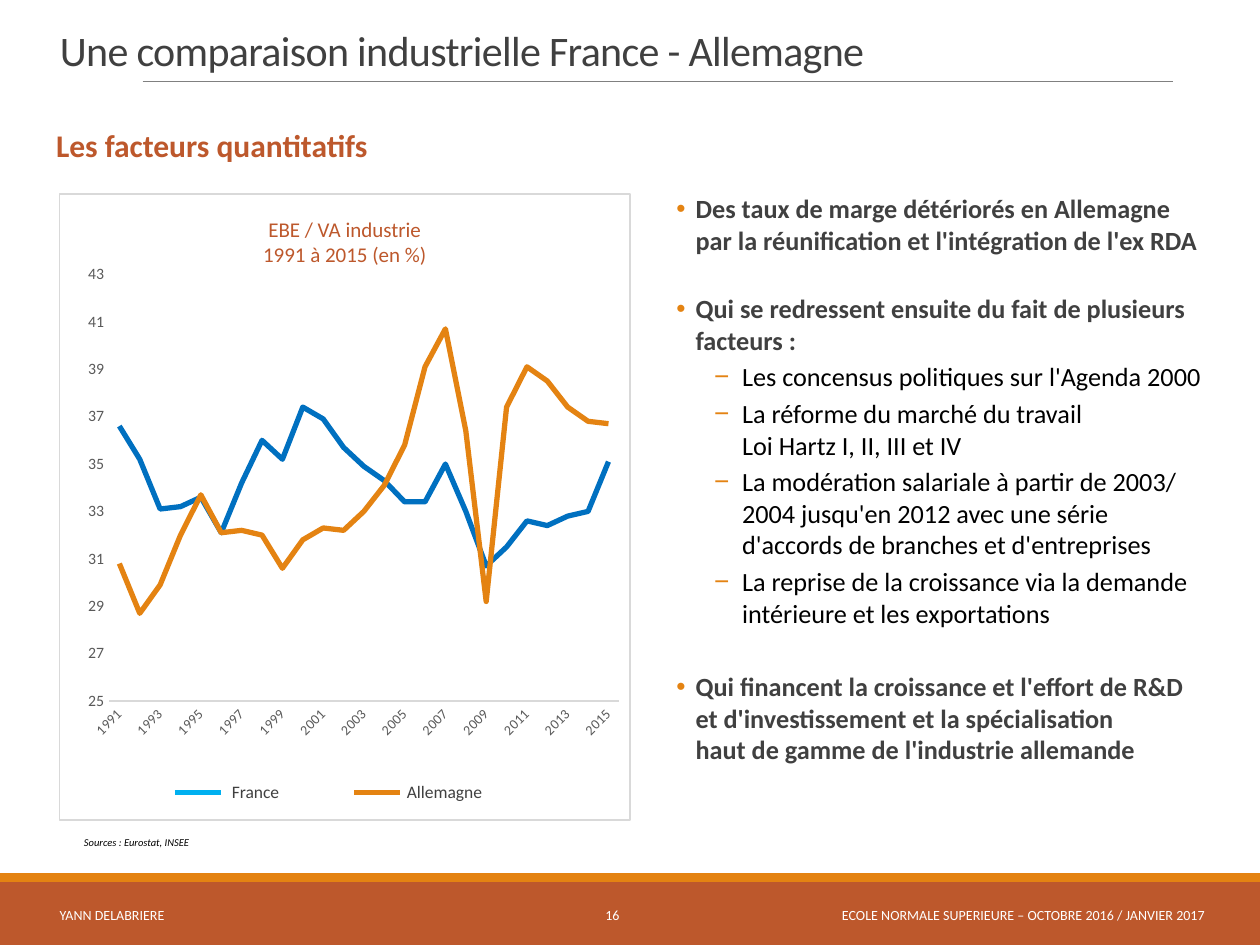
from lxml import etree
from pptx import Presentation
from pptx.chart.data import CategoryChartData
from pptx.dml.color import RGBColor
from pptx.enum.chart import XL_CHART_TYPE, XL_TICK_MARK
from pptx.enum.shapes import MSO_CONNECTOR, MSO_SHAPE
from pptx.enum.text import MSO_ANCHOR, MSO_AUTO_SIZE, PP_ALIGN
from pptx.oxml import parse_xml
from pptx.oxml.ns import nsdecls, qn
from pptx.util import Pt

FONT = "Calibri"
RUST = RGBColor(0xBD, 0x58, 0x2C)
ORANGE = RGBColor(0xE4, 0x83, 0x12)
BLUE = RGBColor(0x00, 0x70, 0xC0)
LIGHT_BLUE = RGBColor(0x00, 0xB0, 0xF0)
DARK = RGBColor(0x40, 0x40, 0x40)
AXIS_TEXT = RGBColor(0x59, 0x59, 0x59)
GREY = RGBColor(0x80, 0x80, 0x80)
PALE = RGBColor(0xD9, 0xD9, 0xD9)
BLACK = RGBColor(0, 0, 0)
WHITE = RGBColor(0xFF, 0xFF, 0xFF)

TITLE = "Une comparaison industrielle France - Allemagne"
SUBTITLE = "Les facteurs quantitatifs"
CHART_TITLE = ["EBE / VA industrie", "1991 à 2015 (en %)"]
SOURCES = "Sources : Eurostat, INSEE"
# left, width, alignment, text
FOOTER = [
    (27, 199, PP_ALIGN.LEFT, "YANN DELABRIERE"),
    (311, 78, PP_ALIGN.CENTER, "16"),
    (459, 237, PP_ALIGN.RIGHT, "ECOLE NORMALE SUPERIEURE – OCTOBRE 2016 / JANVIER 2017"),
]
# level, space before, lines
POINTS = [
    (1, 0, ["Des taux de marge détériorés en Allemagne",
            "par la réunification et l'intégration de l'ex RDA"]),
    (1, 21, ["Qui se redressent ensuite du fait de plusieurs", "facteurs :"]),
    (2, 3, ["Les concensus politiques sur l'Agenda 2000"]),
    (2, 3, ["La réforme du marché du travail", "Loi Hartz I, II, III et IV"]),
    (2, 3, ["La modération salariale à partir de 2003/",
            "2004 jusqu'en 2012 avec une série",
            "d'accords de branches et d'entreprises"]),
    (2, 3, ["La reprise de la croissance via la demande",
            "intérieure et les exportations"]),
    (1, 24, ["Qui financent la croissance et l'effort de R&D",
             "et d'investissement et la spécialisation",
             "haut de gamme de l'industrie allemande"]),
]
# level: bullet, text indent, hanging indent, colour, bold
LEVELS = {1: ("•", 23, 11, DARK, True), 2: ("−", 49.5, 16, BLACK, False)}

YEARS = [str(year) for year in range(1991, 2016)]
SERIES = [
    ("France", BLUE,
     [36.6, 35.2, 33.1, 33.2, 33.6, 32.1, 34.2, 36, 35.2, 37.4, 36.9, 35.7, 34.9,
      34.3, 33.4, 33.4, 35, 33, 30.7, 31.5, 32.6, 32.4, 32.8, 33, 35.1]),
    ("Allemagne", ORANGE,
     [30.8, 28.7, 29.9, 32, 33.7, 32.1, 32.2, 32, 30.6, 31.8, 32.3, 32.2, 33,
      34.1, 35.8, 39.1, 40.7, 36.4, 29.2, 37.4, 39.1, 38.5, 37.4, 36.8, 36.7]),
]
# key line left, label left, colour, label
LEGEND = [(100, 132.5, LIGHT_BLUE, "France"), (202.5, 232.5, ORANGE, "Allemagne")]
PLOT = {"x": 0.07, "y": 0.04, "w": 0.91, "h": 0.865}


def style(font, size, color, bold=False, italic=False):
    font.name, font.size = FONT, Pt(size)
    font.bold, font.italic = bold, italic
    font.color.rgb = color


def place(sp, left, top, width, height):
    sp.left, sp.top, sp.width, sp.height = Pt(left), Pt(top), Pt(width), Pt(height)


def set_frame(sp, anchor, margins, wrap=True):
    """Set anchor and (horizontal, vertical) margins; return the text frame."""
    tf = sp.text_frame
    tf.word_wrap, tf.auto_size, tf.vertical_anchor = wrap, MSO_AUTO_SIZE.NONE, anchor
    tf.margin_left = tf.margin_right = Pt(margins[0])
    tf.margin_top = tf.margin_bottom = Pt(margins[1])
    return tf


def add_run(p, text, *font_style):
    r = p.add_run()
    r.text = text
    style(r.font, *font_style)
    return r


def add_text(s, box, lines, font_style, align=PP_ALIGN.LEFT,
             anchor=MSO_ANCHOR.TOP, margins=(7.2, 3.6), wrap=True):
    sp = s.shapes.add_textbox(*map(Pt, box))
    tf = set_frame(sp, anchor, margins, wrap)
    for i, line in enumerate(lines):
        p = tf.add_paragraph() if i else tf.paragraphs[0]
        p.alignment = align
        add_run(p, line, *font_style)


def add_rect(s, box, fill=None, line=None):
    sp = s.shapes.add_shape(MSO_SHAPE.RECTANGLE, *map(Pt, box))
    sp.shadow.inherit = False
    if fill is None:
        sp.fill.background()
    else:
        sp.fill.solid()
        sp.fill.fore_color.rgb = fill
    if line is None:
        sp.line.fill.background()
    else:
        sp.line.color.rgb, sp.line.width = line, Pt(1)


def add_rule(s, left, right, y, color, width):
    line = s.shapes.add_connector(MSO_CONNECTOR.STRAIGHT, Pt(left), Pt(y), Pt(right), Pt(y))
    line.line.color.rgb, line.line.width = color, Pt(width)
    etree.SubElement(line._element.spPr, qn("a:effectLst"))


def set_bullet(p, char, indent, hanging):
    pPr = p._p.get_or_add_pPr()
    pPr.set("marL", str(Pt(indent)))
    pPr.set("indent", str(-Pt(hanging)))
    if char is None:
        etree.SubElement(pPr, qn("a:buNone"))
        return
    color = etree.SubElement(pPr, qn("a:buClr"))
    etree.SubElement(color, qn("a:srgbClr")).set("val", str(ORANGE))
    etree.SubElement(pPr, qn("a:buChar")).set("char", char)


def add_line_chart(s, box):
    data = CategoryChartData()
    data.categories = YEARS
    for name, _, values in SERIES:
        data.add_series(name, values)
    chart = s.shapes.add_chart(XL_CHART_TYPE.LINE, *map(Pt, box), data).chart
    chart.has_title = chart.has_legend = False
    style(chart.font, 10, BLACK)
    plot = chart.plots[0]
    plot.vary_by_categories = False
    for series, (_, color, _) in zip(plot.series, SERIES):
        series.smooth = False
        series.format.line.color.rgb, series.format.line.width = color, Pt(3)

    values, years = chart.value_axis, chart.category_axis
    values.minimum_scale, values.maximum_scale, values.major_unit = 25, 43, 2
    values.has_major_gridlines = False
    values.format.line.fill.background()
    years.format.line.color.rgb, years.format.line.width = PALE, Pt(0.75)
    for axis, size in ((values, 9), (years, 8)):
        axis.major_tick_mark = XL_TICK_MARK.NONE
        style(axis.tick_labels.font, size, AXIS_TEXT)
    values.tick_labels.number_format = "0"
    values.tick_labels.number_format_is_linked = False
    years._element.find(qn("c:txPr")).find(qn("a:bodyPr")).set("rot", "-2700000")
    skip = parse_xml(f'<c:tickLblSkip {nsdecls("c")} val="2"/>')
    years._element.find(qn("c:noMultiLvlLbl")).addprevious(skip)

    area = chart._chartSpace.chart.plotArea
    for old in area.findall(qn("c:layout")):
        area.remove(old)
    sizes = "".join(f'<c:{key} val="{value}"/>' for key, value in PLOT.items())
    area.insert(0, parse_xml(
        f'<c:layout {nsdecls("c")}><c:manualLayout><c:layoutTarget val="inner"/>'
        f'<c:xMode val="edge"/><c:yMode val="edge"/>{sizes}</c:manualLayout></c:layout>'))


prs = Presentation()
prs.slide_width, prs.slide_height = Pt(720), Pt(540)
s = prs.slides.add_slide(prs.slide_layouts.get_by_name("Two Content"))
title, subtitle, body = s.placeholders

add_rect(s, (0, 504, 720, 36), fill=RUST)
add_rect(s, (0, 499, 720, 5), fill=ORANGE)
add_rule(s, 81.5, 670.5, 46.5, GREY, 0.5)
for left, width, align, text in FOOTER:
    add_text(s, (left, 508.5, width, 29), [text], (8, WHITE), align, MSO_ANCHOR.MIDDLE)

place(title, 27, 0.7, 669, 46)
p = set_frame(title, MSO_ANCHOR.BOTTOM, (7.2, 3.6)).paragraphs[0]
p.alignment, p.line_spacing = PP_ALIGN.LEFT, 0.85
add_run(p, TITLE, 24, DARK).font._element.set("spc", "-40")

place(subtitle, 27, 68.5, 662, 32)
p = set_frame(subtitle, MSO_ANCHOR.TOP, (0, 3.6)).paragraphs[0]
set_bullet(p, None, 5, 0)
p.space_before = Pt(0)
add_run(p, SUBTITLE, 18, RUST, True)

add_line_chart(s, (40, 145.5, 320, 282))
add_rect(s, (34, 111, 326, 357.5), line=PALE)
add_text(s, (142, 120, 110, 36), CHART_TITLE, (12, RUST), PP_ALIGN.CENTER, wrap=False)
add_text(s, (40, 474, 76, 14.5), [SOURCES], (6, BLACK, False, True), PP_ALIGN.CENTER, wrap=False)
for key_left, label_left, color, label in LEGEND:
    add_rule(s, key_left, key_left + 26, 453, color, 3)
    add_text(s, (label_left, 446.5, 90, 12), [label], (10, DARK), margins=(0, 0))

place(body, 374.5, 106.5, 336, 350)
tf = set_frame(body, MSO_ANCHOR.TOP, (0, 3.6))
for i, (level, gap, lines) in enumerate(POINTS):
    char, indent, hanging, color, bold = LEVELS[level]
    p = tf.add_paragraph() if i else tf.paragraphs[0]
    p.level = level - 1
    set_bullet(p, char, indent, hanging)
    p.space_before = Pt(gap)
    for j, line in enumerate(lines):
        if j:
            p.add_line_break()
        add_run(p, line, 15, color, bold)

prs.save("out.pptx")
